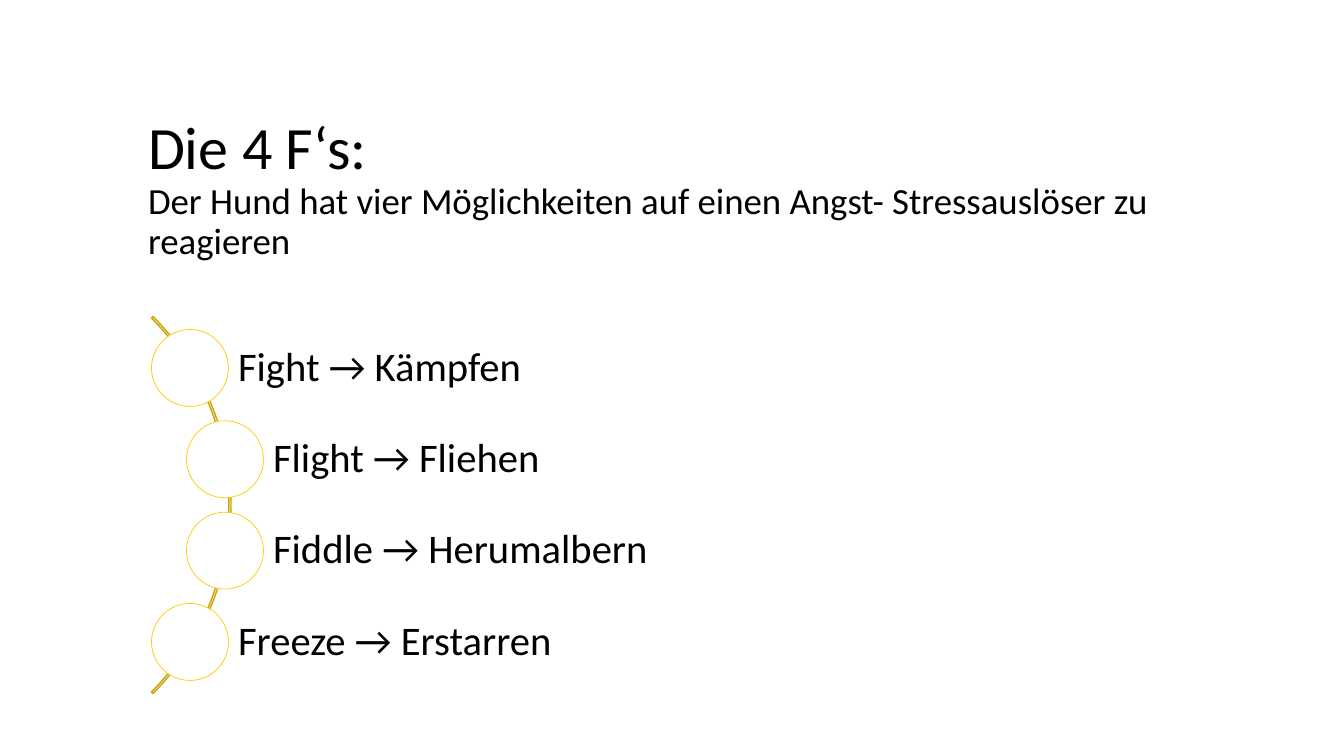
from pptx import Presentation
from pptx.dml.color import RGBColor
from pptx.enum.shapes import MSO_SHAPE
from pptx.enum.text import MSO_ANCHOR, MSO_AUTO_SIZE, PP_ALIGN
from pptx.util import Pt

EMU_PER_INCH = 914400
PIXELS_PER_INCH = 100.8
COLORS = {"text": "000000", "white": "FFFFFF", "arc": "CCA206", "circle": "FFCA08"}
REACTIONS = [
    "Fight → Kämpfen",
    "Flight → Fliehen",
    "Fiddle → Herumalbern",
    "Freeze → Erstarren",
]


def px(length):
    """Turn a length in px into EMU."""
    return round(length * EMU_PER_INCH / PIXELS_PER_INCH)


def color(name):
    """Return the named colour."""
    return RGBColor.from_string(COLORS[name])


def add_text(paragraph, text, size, font="Calibri", fill="text"):
    """Append a formatted run to a left-aligned paragraph."""
    paragraph.alignment = PP_ALIGN.LEFT
    paragraph.line_spacing = 0.9
    run = paragraph.add_run()
    run.text = text
    run.font.name = font
    run.font.size = Pt(size)
    run.font.color.rgb = color(fill)


def add_shape(slide, kind, box, fill=None, line=None, width=1):
    """Add a flat preset shape in a box of px lengths."""
    shape = slide.shapes.add_shape(kind, *map(px, box))
    shape.shadow.inherit = False
    if fill:
        shape.fill.solid()
        shape.fill.fore_color.rgb = color(fill)
    else:
        shape.fill.background()
    if line:
        shape.line.color.rgb = color(line)
        shape.line.width = Pt(width)
    else:
        shape.line.fill.background()
    return shape


def add_heading(slide, box):
    """Fill the title placeholder with the heading and its explanation."""
    title = slide.shapes.title
    title.left, title.top, title.width, title.height = map(px, box)
    frame = title.text_frame
    frame.word_wrap = True
    frame.auto_size = MSO_AUTO_SIZE.NONE
    frame.vertical_anchor = MSO_ANCHOR.TOP
    paragraph = frame.paragraphs[0]
    add_text(paragraph, "Die 4 F‘s: ", size=42.9)
    paragraph.add_line_break()
    add_text(
        paragraph,
        "Der Hund hat vier Möglichkeiten auf einen Angst- Stressauslöser zu reagieren",
        size=26.3,
    )


def add_reaction(slide, text, box):
    """Add a label bar with a circle centred on its left edge."""
    left, top, width, height = box
    diameter = 77
    bar = add_shape(slide, MSO_SHAPE.RECTANGLE, box, fill="white")
    frame = bar.text_frame
    frame.word_wrap = True
    frame.vertical_anchor = MSO_ANCHOR.MIDDLE
    frame.margin_left = px(48)
    frame.margin_right = frame.margin_top = frame.margin_bottom = px(8)
    add_text(frame.paragraphs[0], text, size=29)
    circle_box = (left - diameter / 2, top + (height - diameter) / 2, diameter, diameter)
    add_shape(slide, MSO_SHAPE.OVAL, circle_box, fill="white", line="circle", width=0.5)


def add_reaction_arc(slide, box):
    """Place the reactions along an arc bulging to the right."""
    left, top, width, height = box
    arc_size, arc_offset, bar_height, indent = 533, 492, 60, 35
    arc_box = (left - arc_offset, top + (height - arc_size) / 2, arc_size, arc_size)
    arc = add_shape(slide, MSO_SHAPE.BLOCK_ARC, arc_box, line="arc")
    for index, value in enumerate((189, 27, 0.004)):
        arc.adjustments[index] = value
    last = len(REACTIONS) - 1
    pitch = (height - bar_height) / last
    for index, text in enumerate(REACTIONS):
        shift = 0 if index in (0, last) else indent
        bar_box = (left + shift, top + index * pitch, width - shift, bar_height)
        add_reaction(slide, text, bar_box)


def main():
    """Build and save the presentation."""
    presentation = Presentation()
    presentation.slide_width = px(1344)
    presentation.slide_height = px(756)
    slide = presentation.slides.add_slide(presentation.slide_layouts[5])
    add_heading(slide, (138, 113, 1122, 164))
    add_reaction_arc(slide, (190, 338, 1072, 334))
    presentation.save("out.pptx")


if __name__ == "__main__":
    main()
